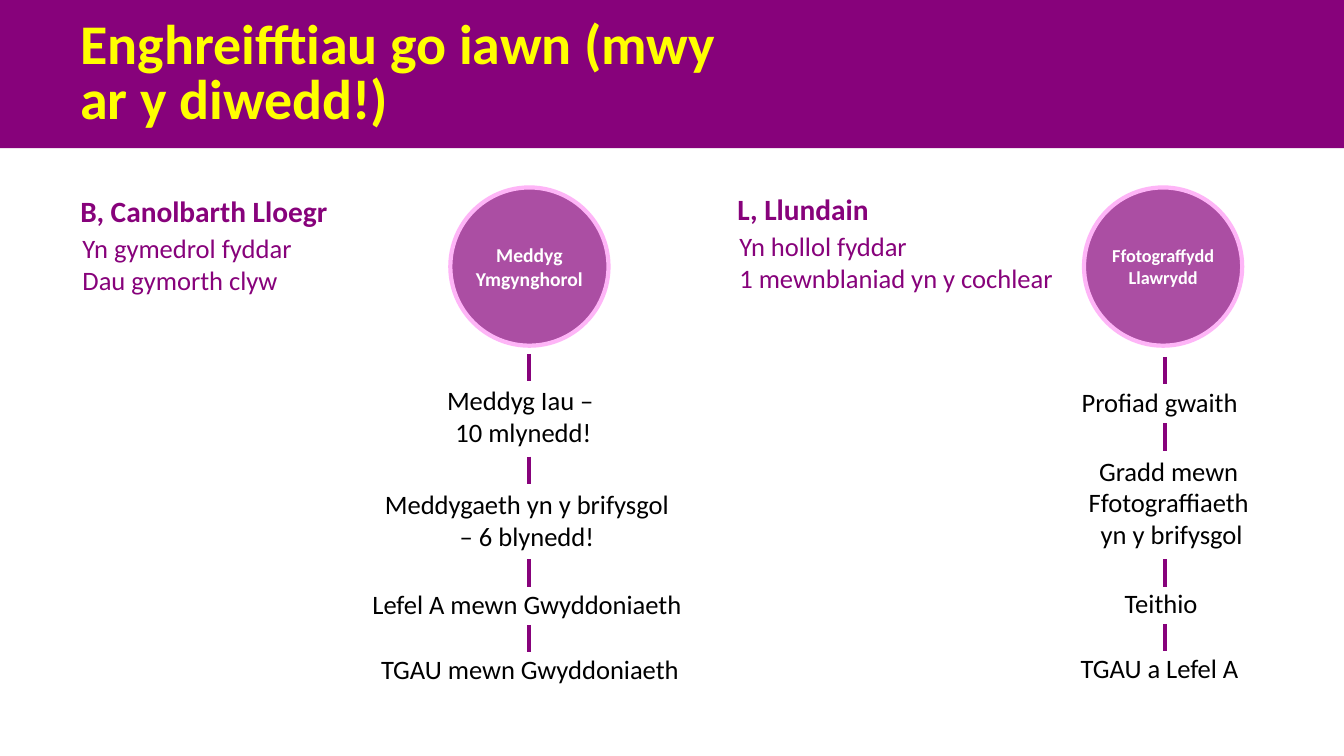
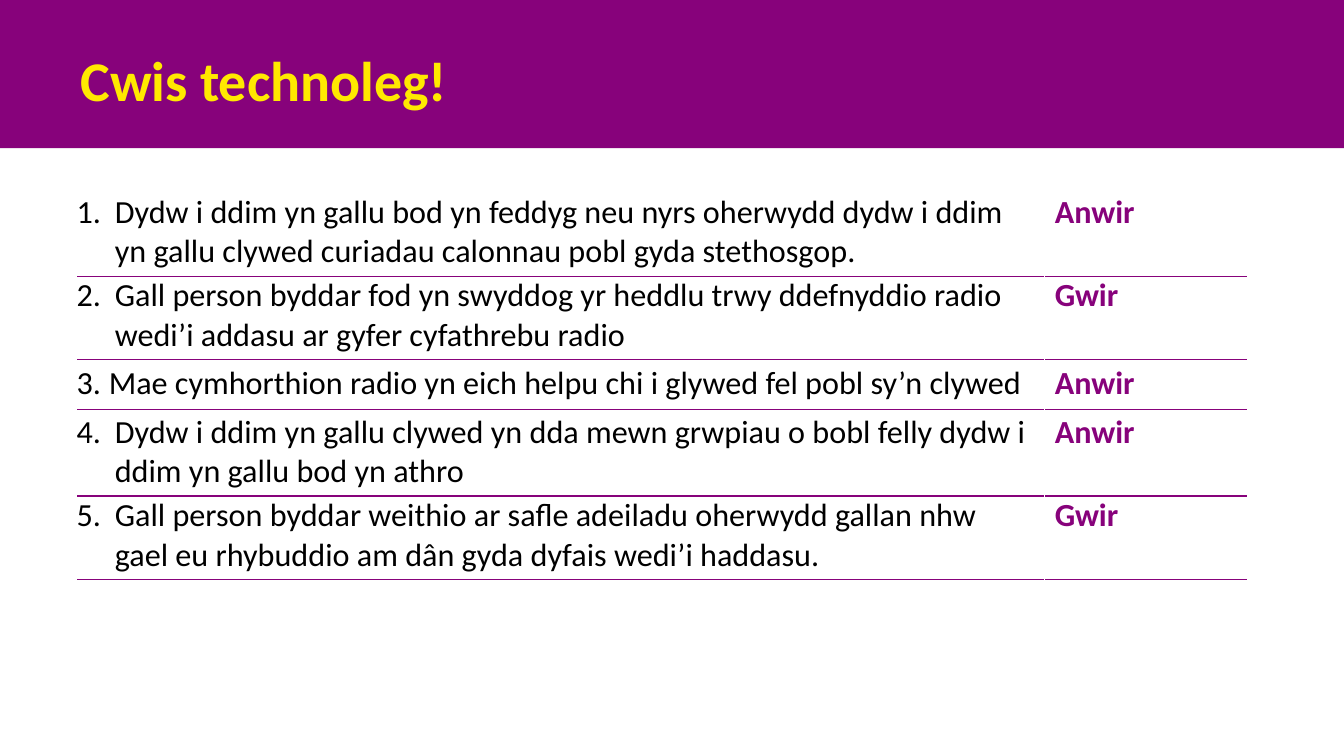
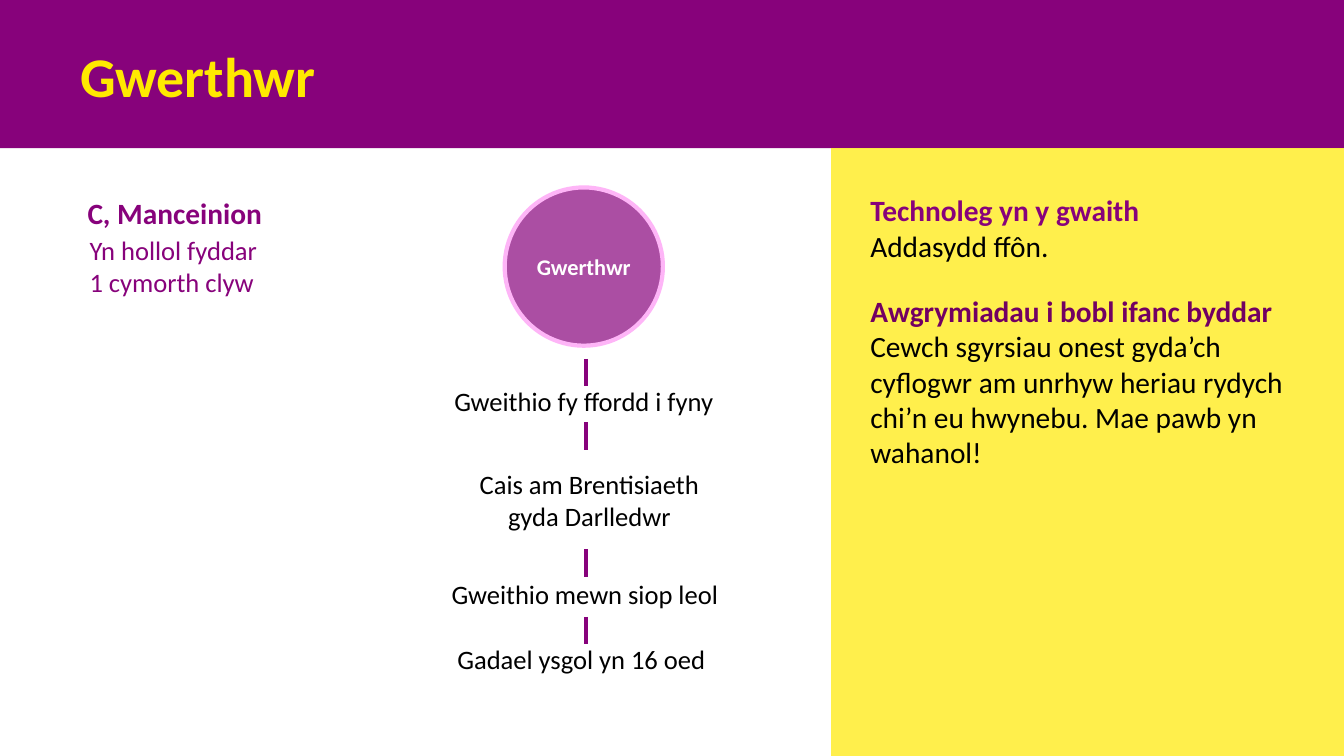
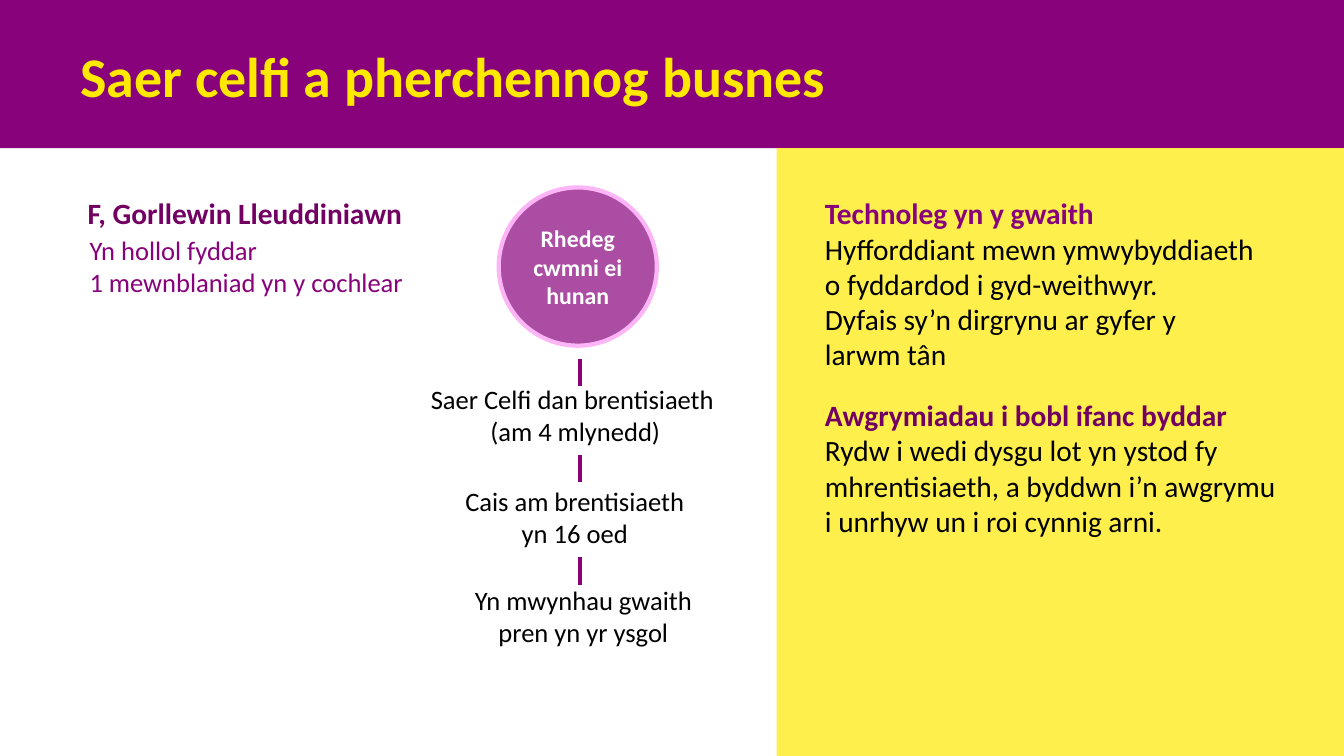
from lxml.etree import SubElement
from pptx import Presentation
from pptx.dml.color import RGBColor
from pptx.enum.shapes import MSO_CONNECTOR as Connector, MSO_SHAPE as Shape
from pptx.enum.text import MSO_ANCHOR as Anchor, PP_ALIGN as Align
from pptx.oxml.ns import qn
from pptx.util import Pt

PX = 9144
SLIDE_W, SLIDE_H = 1334, 750
BAND_H = 147
CIRCLE_TOP, CIRCLE_SIZE = 186, 157
TICK_LENGTH = 27
FONT = "Calibri"

PURPLE = RGBColor(0x87, 0x02, 0x7B)
PLUM = RGBColor(0x72, 0x00, 0x62)
ORCHID = RGBColor(0xAB, 0x4E, 0xA3)
PINK = RGBColor(0xFE, 0xB5, 0xF7)
GOLD = RGBColor(0xFF, 0xE9, 0x00)
YELLOW = RGBColor(0xFF, 0xFF, 0x00)
BLACK = RGBColor(0, 0, 0)
WHITE = RGBColor(0xFF, 0xFF, 0xFF)


def px(*lengths):
    return [length * PX for length in lengths]


def style(paragraph, size, color, bold=False, align=None):
    paragraph.alignment = align
    font = paragraph.font
    font.name, font.size, font.bold = FONT, Pt(size), bold
    font.color.rgb = color


def add_text(slide, text, left, top, width, height, size, color, bold=False, align=None):
    frame = slide.shapes.add_textbox(*px(left, top, width, height)).text_frame
    frame.word_wrap = True
    frame.text = text
    for paragraph in frame.paragraphs:
        style(paragraph, size, color, bold, align)
    return frame


def add_filled(slide, kind, left, top, width, height, color):
    shape = slide.shapes.add_shape(kind, *px(left, top, width, height))
    shape.shadow.inherit = False
    shape.fill.solid()
    shape.fill.fore_color.rgb = color
    shape.line.fill.background()
    return shape


def add_titled_slide(deck, title, top=35, width=897, height=79, color=GOLD):
    slide = deck.slides.add_slide(deck.slide_layouts[6])
    add_filled(slide, Shape.RECTANGLE, 0, 0, SLIDE_W, BAND_H, PURPLE)
    frame = add_text(slide, title, 70, top, width, height, 40, color, bold=True)
    frame.vertical_anchor = Anchor.MIDDLE
    return slide, frame


def add_person(slide, left, top, name, details, color=PURPLE):
    add_text(slide, name, left, top, 335, 45, 21, color, bold=True)
    add_text(slide, details, left + 2, top + 38, 335, 74, 19, PURPLE)


def add_tick(slide, x, top):
    tick = slide.shapes.add_connector(
        Connector.STRAIGHT, *px(x, top, x, top + TICK_LENGTH))
    tick.line.color.rgb = PURPLE
    tick.line.width = Pt(3)
    SubElement(tick._element.spPr, qn("a:effectLst"))


def add_career(slide, circle_left, job, job_size, axis, tick_tops, steps):
    circle = add_filled(slide, Shape.OVAL, circle_left, CIRCLE_TOP,
                        CIRCLE_SIZE, CIRCLE_SIZE, ORCHID)
    circle.line.color.rgb = PINK
    circle.line.width = Pt(3)
    frame = circle.text_frame
    frame.margin_left = frame.margin_right = frame.margin_top = frame.margin_bottom = 0
    frame.word_wrap = True
    frame.vertical_anchor = Anchor.MIDDLE
    frame.text = job
    style(frame.paragraphs[0], job_size, WHITE, True, Align.CENTER)
    for top in tick_tops:
        add_tick(slide, axis, top)
    for text, left, top, width, height in steps:
        add_text(slide, text, left, top, width, height, 19, BLACK, align=Align.CENTER)


def add_panel(slide, left):
    panel = add_filled(slide, Shape.RECTANGLE, left, BAND_H,
                       SLIDE_W - left, SLIDE_H - BAND_H, GOLD)
    gold = panel._element.spPr.find(qn("a:solidFill")).find(qn("a:srgbClr"))
    SubElement(gold, qn("a:alpha"), val="70000")


def add_note(slide, left, top, width, height, heading, body, color):
    frame = add_text(slide, f"{heading}\n{body}", left, top, width, height, 21, BLACK)
    style(frame.paragraphs[0], 21, color, bold=True)


def add_advice(slide, left, width, technology, tips):
    for (top, height, body), heading, color in (
            (technology, "Technoleg yn y gwaith", PURPLE),
            (tips, "Awgrymiadau i bobl ifanc byddar", PLUM)):
        add_note(slide, left, top, width, height, heading, body, color)


def set_borders(cell):
    properties = cell._tc.get_or_add_tcPr()
    for side, color in (("L", WHITE), ("R", WHITE), ("T", None), ("B", PURPLE)):
        border = SubElement(properties, qn(f"a:ln{side}"), w=str(Pt(1)))
        if color is None:
            SubElement(border, qn("a:noFill"))
        else:
            fill = SubElement(border, qn("a:solidFill"))
            SubElement(fill, qn("a:srgbClr"), val=str(color))


def add_quiz_cell(slide, text, left, top, width, height, color, bold=False, indent=0):
    table = slide.shapes.add_table(1, 1, *px(left, top, width, height)).table
    table.first_row = table.horz_banding = False
    cell = table.cell(0, 0)
    set_borders(cell)
    cell.fill.background()
    cell.text = text
    paragraph = cell.text_frame.paragraphs[0]
    if indent:
        cell.margin_left = 0
        properties = paragraph._p.get_or_add_pPr()
        properties.set("marL", str(indent * PX))
        properties.set("indent", str(-indent * PX))
    style(paragraph, 23, color, bold)


def build_examples(deck):
    slide, title = add_titled_slide(
        deck, "Enghreifftiau go iawn (mwy ar y diwedd!)", 36, 677, 79, YELLOW)
    title.paragraphs[0].line_spacing = Pt(39.2)
    add_person(slide, 70, 187, "B, Canolbarth Lloegr",
               "Yn gymedrol fyddar\nDau gymorth clyw")
    add_career(slide, 447, "Meddyg Ymgynghorol", 14, 525, (351, 453, 555, 620), (
        ("Meddyg Iau – \v10 mlynedd!", 378, 376, 283, 74),
        ("Meddygaeth yn y brifysgol – 6 blynedd!", 365, 479, 316, 74),
        ("Lefel A mewn Gwyddoniaeth", 334, 578, 378, 42),
        ("TGAU mewn Gwyddoniaeth", 346, 643, 360, 42),
    ))
    add_person(slide, 722, 185, "L, Llundain",
               "Yn hollol fyddar\n1 mewnblaniad yn y cochlear")
    add_career(slide, 1076, "Ffotograffydd Llawrydd", 13, 1156, (354, 420, 555, 619), (
        ("Profiad gwaith", 1019, 378, 264, 42),
        ("Gradd mewn \vFfotograffiaeth \vyn y brifysgol", 1003, 446, 320, 106),
        ("Teithio", 1011, 577, 283, 42),
        ("TGAU a Lefel A", 981, 642, 340, 42),
    ))


def build_quiz(deck):
    slide, _ = add_titled_slide(deck, "Cwis technoleg!", height=87)
    questions = (
        (186, 88, 38, "1.\tDydw i ddim yn gallu bod yn feddyg neu nyrs oherwydd dydw i ddim "
                      "yn gallu clywed curiadau calonnau pobl gyda stethosgop.", "Anwir"),
        (269, 88, 38, "2.\tGall person byddar fod yn swyddog yr heddlu trwy ddefnyddio radio "
                      "wedi’i addasu ar gyfer cyfathrebu radio", "Gwir"),
        (356, 50, 32, "3.\tMae cymhorthion radio yn eich helpu chi i glywed fel pobl "
                      "sy’n clywed", "Anwir"),
        (404, 88, 38, "4.\tDydw i ddim yn gallu clywed yn dda mewn grwpiau o bobl felly dydw i "
                      "ddim yn gallu bod yn athro", "Anwir"),
        (487, 88, 38, "5.\tGall person byddar weithio ar safle adeiladu oherwydd gallan nhw "
                      "gael eu rhybuddio am dân gyda dyfais wedi’i haddasu.", "Gwir"),
    )
    for top, height, indent, question, answer in questions:
        add_quiz_cell(slide, question, 76, top, 961, height, BLACK, indent=indent)
        add_quiz_cell(slide, answer, 1037, top, 201, height, PURPLE, bold=True)


def build_seller(deck):
    slide, _ = add_titled_slide(deck, "Gwerthwr")
    add_panel(slide, 825)
    add_person(slide, 77, 189, "C, Manceinion", "Yn hollol fyddar\n1 cymorth clyw")
    add_career(slide, 501, "Gwerthwr", 16, 582, (356, 419, 545, 612), (
        ("Gweithio fy ffordd i fyny", 438, 377, 283, 42),
        ("Cais am Brentisiaeth gyda Darlledwr", 453, 459, 264, 74),
        ("Gweithio mewn siop leol", 415, 568, 331, 42),
        ("Gadael ysgol yn 16 oed", 387, 633, 380, 42),
    ))
    add_advice(slide, 854, 435, (186, 81, "Addasydd ffôn."), (
        286, 187, "Cewch sgyrsiau onest gyda’ch cyflogwr am unrhyw heriau rydych "
                  "chi’n eu hwynebu. Mae pawb yn wahanol!"))


def build_joiner(deck):
    slide, _ = add_titled_slide(deck, "Saer celfi a pherchennog busnes")
    add_panel(slide, 771)
    add_person(slide, 77, 189, "F, Gorllewin Lleuddiniawn",
               "Yn hollol fyddar\n1 mewnblaniad yn y cochlear", PLUM)
    add_career(slide, 495, "Rhedeg cwmni ei hunan", 17, 576, (356, 451, 553), (
        ("Saer Celfi dan brentisiaeth \n(am 4 mlynedd)", 381, 375, 380, 74),
        ("Cais am brentisiaeth\vyn 16 oed", 429, 476, 283, 74),
        ("Yn mwynhau gwaith pren yn yr ysgol", 447, 574, 264, 74),
    ))
    add_advice(slide, 809, 476, (
        189, 187, "Hyfforddiant mewn ymwybyddiaeth \vo fyddardod i gyd-weithwyr."
                  "\vDyfais sy’n dirgrynu ar gyfer y \vlarwm tân"), (
        389, 151, "Rydw i wedi dysgu lot yn ystod fy mhrentisiaeth, a byddwn i’n "
                  "awgrymu i unrhyw un i roi cynnig arni."))


def main():
    deck = Presentation()
    deck.slide_width, deck.slide_height = px(SLIDE_W, SLIDE_H)
    for build in (build_examples, build_quiz, build_seller, build_joiner):
        build(deck)
    deck.save("out.pptx")


if __name__ == "__main__":
    main()
